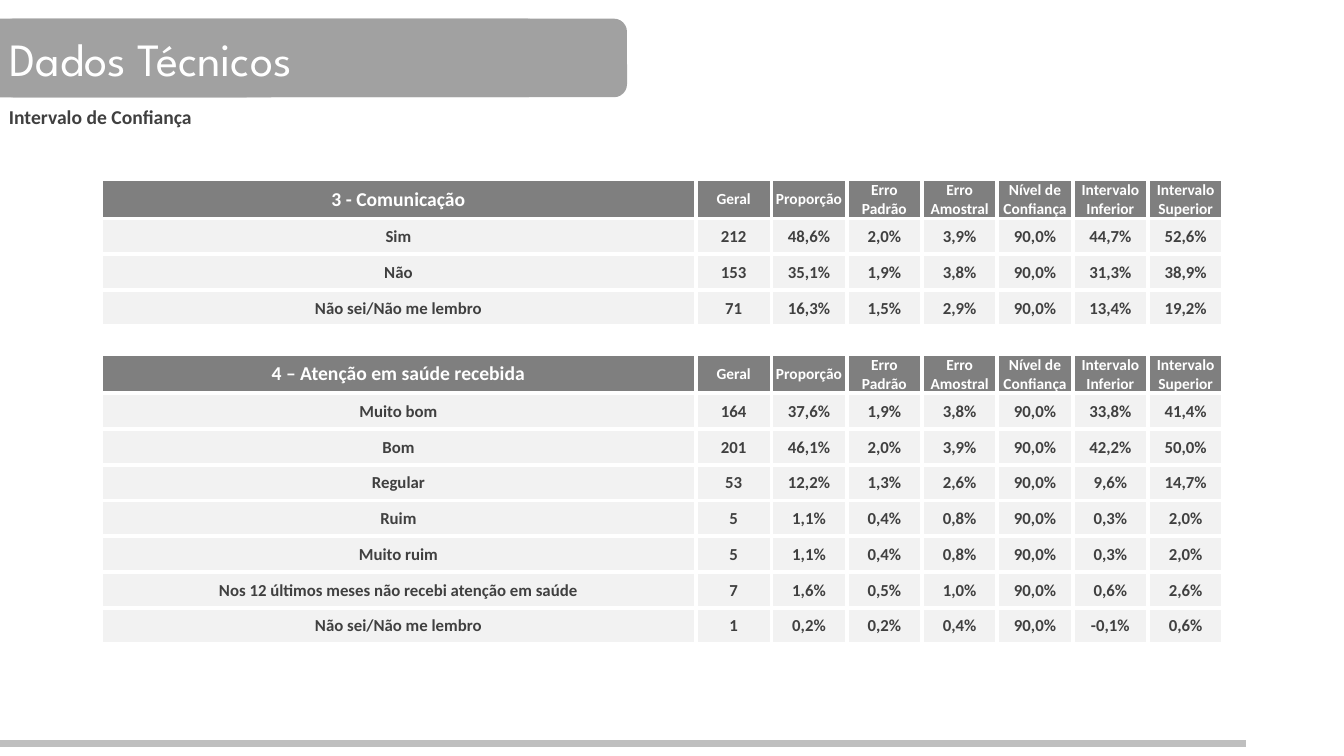
import pptx
import pptx.util
import pptx.dml.color
import pptx.enum.shapes
import pptx.enum.text
import pptx.oxml.ns
from lxml import etree

SCALE = 2286  # EMU in one px, 400 px to the inch
WHITE, DARK, HEAD, PALE, BAND, RULE = "FFFFFF", "404040", "7F7F7F", "F2F2F2", "A1A1A1", "BFBFBF"
MID = pptx.enum.text.MSO_ANCHOR.MIDDLE
CENTER = pptx.enum.text.PP_ALIGN.CENTER
LEFT = pptx.enum.text.PP_ALIGN.LEFT
qn = pptx.oxml.ns.qn

TITLES = ["Geral", "Proporção", "Erro Padrão", "Erro Amostral",
          "Nível de Confiança", "Intervalo Inferior", "Intervalo Superior"]
TALK = [
    ["Sim", "212", "48,6%", "2,0%", "3,9%", "90,0%", "44,7%", "52,6%"],
    ["Não", "153", "35,1%", "1,9%", "3,8%", "90,0%", "31,3%", "38,9%"],
    ["Não sei/Não me lembro", "71", "16,3%", "1,5%", "2,9%", "90,0%", "13,4%", "19,2%"],
]
CARE = [
    ["Muito bom", "164", "37,6%", "1,9%", "3,8%", "90,0%", "33,8%", "41,4%"],
    ["Bom", "201", "46,1%", "2,0%", "3,9%", "90,0%", "42,2%", "50,0%"],
    ["Regular", "53", "12,2%", "1,3%", "2,6%", "90,0%", "9,6%", "14,7%"],
    ["Ruim", "5", "1,1%", "0,4%", "0,8%", "90,0%", "0,3%", "2,0%"],
    ["Muito ruim", "5", "1,1%", "0,4%", "0,8%", "90,0%", "0,3%", "2,0%"],
    ["Nos 12 últimos meses não recebi atenção em saúde",
     "7", "1,6%", "0,5%", "1,0%", "90,0%", "0,6%", "2,6%"],
    ["Não sei/Não me lembro", "1", "0,2%", "0,2%", "0,4%", "90,0%", "-0,1%", "0,6%"],
]


def px(*sizes):
    return [pptx.util.Emu(size * SCALE) for size in sizes]


def rgb(code):
    return pptx.dml.color.RGBColor.from_string(code)


def apply(item, values):
    for name, value in values.items():
        setattr(item, name, value)


class Page:
    def __init__(self, slide, face):
        self.slide, self.face = slide, face

    def text(self, frame, words, size, color, bold=True, face=None, align=LEFT):
        para = frame.paragraphs[0]
        para.alignment = align
        run = para.add_run()
        run.text = words
        apply(run.font, {"name": face or self.face, "size": pptx.util.Pt(size), "bold": bold})
        run.font.color.rgb = rgb(color)

    def band(self, left, top, width, height):
        kind = pptx.enum.shapes.MSO_SHAPE.ROUNDED_RECTANGLE
        shape = self.slide.shapes.add_shape(kind, *px(left, top, width, height))
        shape.shadow.inherit = False
        shape.fill.solid()
        shape.fill.fore_color.rgb = rgb(BAND)
        shape.line.fill.background()
        return shape

    def rule(self, left, right, top):
        kind = pptx.enum.shapes.MSO_CONNECTOR.STRAIGHT
        line = self.slide.shapes.add_connector(kind, *px(left, top, right, top))
        line.line.color.rgb = rgb(RULE)
        line.line.width = pptx.util.Pt(4.5)
        etree.SubElement(line._element.spPr, qn("a:effectLst"))

    def label(self, left, top, width, height, words, size):
        frame = self.slide.shapes.add_textbox(*px(left, top, width, height)).text_frame
        apply(frame, {"word_wrap": False,
                      "auto_size": pptx.enum.text.MSO_AUTO_SIZE.SHAPE_TO_FIT_TEXT})
        self.text(frame, words, size, DARK)

    def edge(self, cell):
        """Give the cell a white border on all four sides."""
        props = cell._tc.get_or_add_tcPr()
        for side in "LRTB":
            line = etree.SubElement(props, qn("a:ln" + side), w=str(pptx.util.Pt(3)))
            fill = etree.SubElement(line, qn("a:solidFill"))
            etree.SubElement(fill, qn("a:srgbClr"), val=WHITE)

    def cell(self, cell, words, size, color, fill):
        thin = px(4)[0]
        apply(cell, {"margin_left": thin, "margin_right": thin, "margin_top": thin,
                     "margin_bottom": 0, "vertical_anchor": MID})
        self.edge(cell)
        if words:
            cell.fill.solid()
            cell.fill.fore_color.rgb = rgb(fill)
            self.text(cell.text_frame, words, size, color, align=CENTER)
        else:
            cell.fill.background()
            para = cell.text_frame.paragraphs[0]
            etree.SubElement(para._p, qn("a:endParaRPr"), sz="1100")

    def table(self, left, top, widths, rows, tall):
        """Draw rows of texts; tall maps head, body and gap to row heights."""
        shape = self.slide.shapes.add_table(
            len(rows), len(widths), *px(left, top, sum(widths), tall["body"] * len(rows)))
        grid = shape.table
        apply(grid, {"first_row": False, "horz_banding": False})
        for col, width in zip(grid.columns, px(*widths)):
            col.width = width
        for i, (kind, texts) in enumerate(rows):
            grid.rows[i].height = px(tall[kind])[0]
            for j, words in enumerate(texts):
                if kind == "head":
                    look = (11 if j else 14, WHITE, HEAD)
                else:
                    look = (12, DARK, PALE)
                self.cell(grid.cell(i, j), words, *look)


def block(name, body):
    return [("head", [name] + TITLES)] + [("body", row) for row in body]


def main():
    deck = pptx.Presentation()
    deck.slide_width, deck.slide_height = px(5333, 3000)
    page = Page(deck.slides.add_slide(deck.slide_layouts[6]), "Calibri")

    page.band(-108, 74, 2596, 312)
    page.rule(0, 4944, 2950)
    frame = page.band(0, 74, 2144, 312).text_frame
    apply(frame, {"word_wrap": True, "vertical_anchor": MID, "margin_left": px(24)[0]})
    page.text(frame, "Dados Técnicos", 33, WHITE, False, "League Spartan")

    rows = (block("3 - Comunicação", TALK) + [("gap", [""] * 8)]
            + block("4 – Atenção em saúde recebida", CARE))
    page.table(400, 712, [2362] + [299] * 7, rows, {"head": 144, "body": 142, "gap": 113})
    page.label(-4, 396, 812, 136, "Intervalo de Confiança", 14)
    deck.save("out.pptx")


if __name__ == "__main__":
    main()
